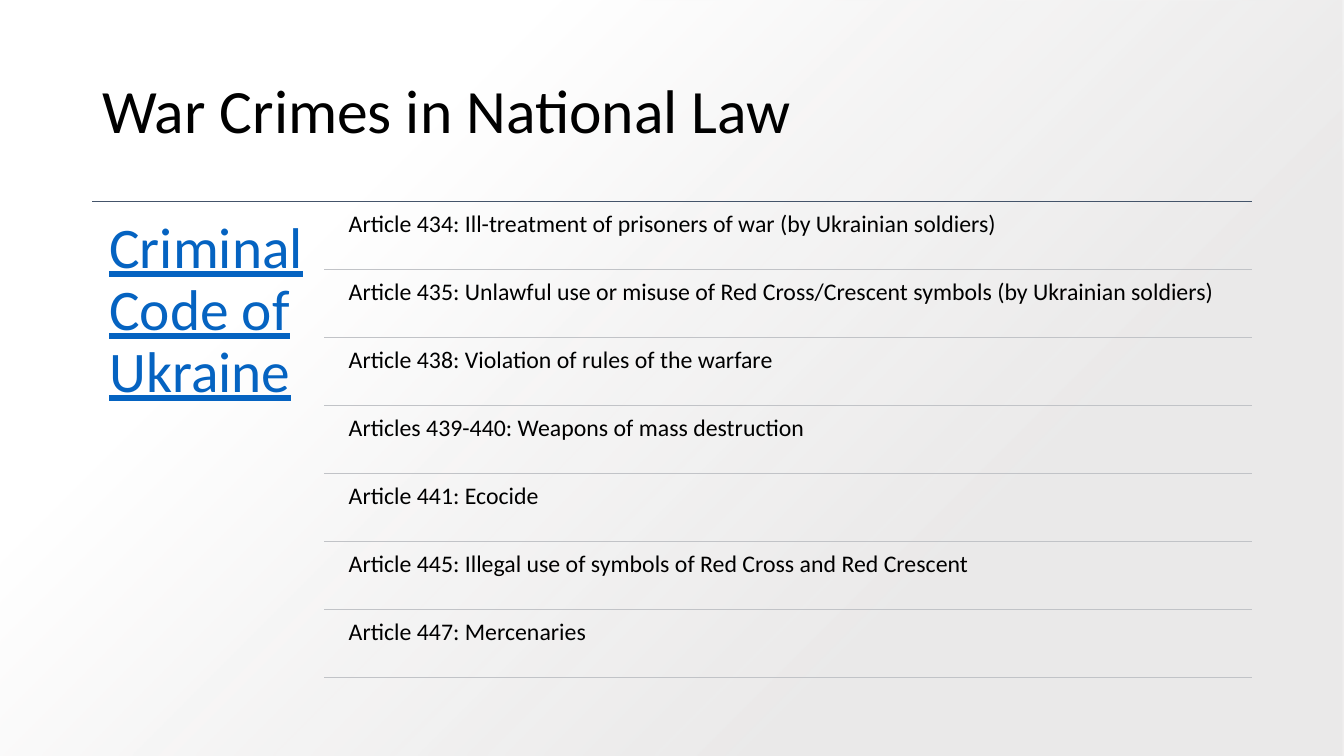
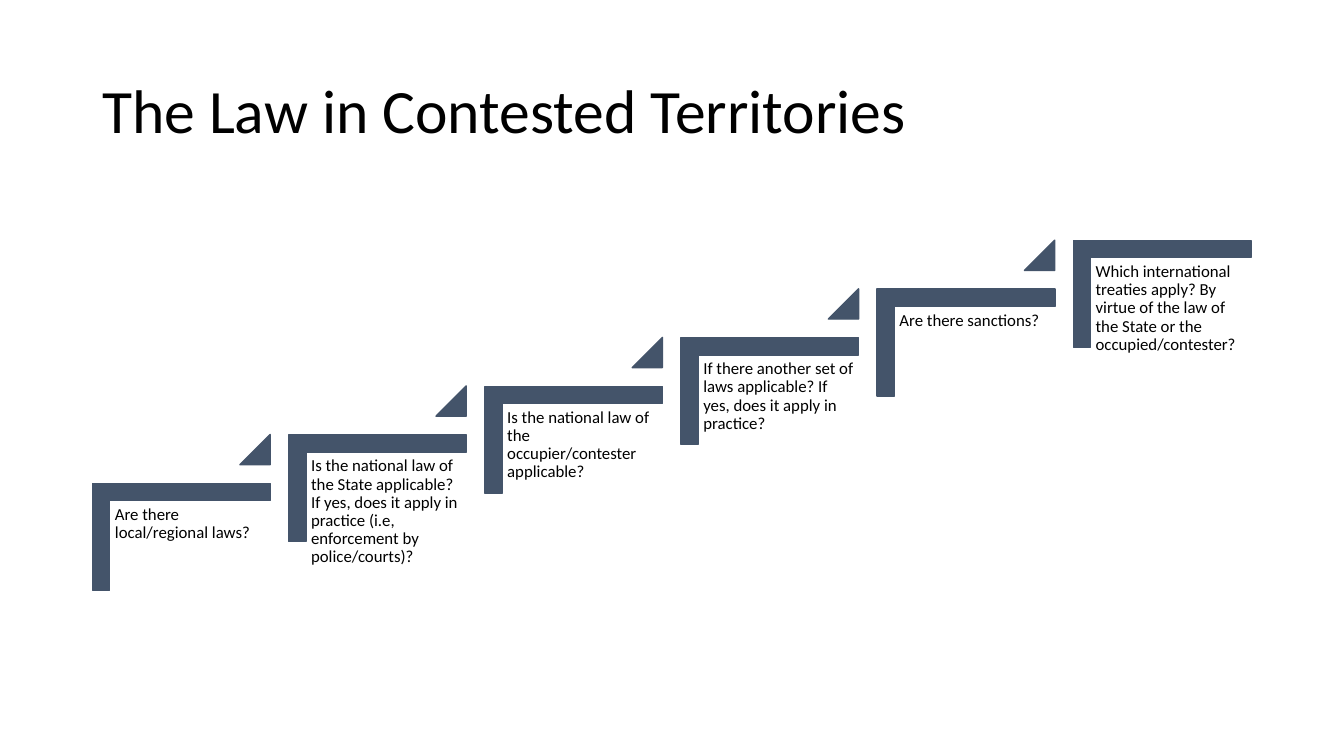
from dataclasses import dataclass

from pptx import Presentation
from pptx.dml.color import RGBColor
from pptx.enum.shapes import MSO_CONNECTOR, MSO_SHAPE
from pptx.enum.text import MSO_ANCHOR
from pptx.oxml import parse_xml
from pptx.oxml.ns import nsdecls
from pptx.oxml.xmlchemy import OxmlElement
from pptx.shapes.autoshape import Shape
from pptx.slide import Slide
from pptx.util import Pt

STRAIGHT = MSO_CONNECTOR.STRAIGHT
RECTANGLE = MSO_SHAPE.RECTANGLE
CORNER = MSO_SHAPE.CORNER
TRIANGLE = MSO_SHAPE.ISOSCELES_TRIANGLE
TOP, MIDDLE = MSO_ANCHOR.TOP, MSO_ANCHOR.MIDDLE

BLACK = RGBColor(0x00, 0x00, 0x00)
SLATE = RGBColor(0x44, 0x54, 0x6A)
LINK_BLUE = RGBColor(0x05, 0x63, 0xC1)
RULE_GREY = RGBColor(0xC1, 0xC3, 0xC7)
GLOW_GREY = RGBColor(0xE7, 0xE6, 0xE6)
WHITE = RGBColor(0xFF, 0xFF, 0xFF)

FONT = "Calibri"
SLIDE_WIDTH, SLIDE_HEIGHT = 960, 540
MARGIN_LEFT, CONTENT_WIDTH = 66, 828
CONTENT_RIGHT = MARGIN_LEFT + CONTENT_WIDTH


@dataclass(frozen=True)
class Box:
    left: float
    top: float
    width: float
    height: float

    def lengths(self) -> tuple[Pt, Pt, Pt, Pt]:
        return Pt(self.left), Pt(self.top), Pt(self.width), Pt(self.height)

    def shifted(self, dx: float, dy: float) -> "Box":
        return Box(self.left + dx, self.top + dy, self.width, self.height)


TITLE_BOX = Box(MARGIN_LEFT, 28.75, CONTENT_WIDTH, 104.4)

ARTICLES = (
    "Article 434: Ill-treatment of prisoners of war (by Ukrainian soldiers)",
    "Article 435: Unlawful use or misuse of Red Cross/Crescent symbols (by Ukrainian soldiers)",
    "Article 438: Violation of rules of the warfare",
    "Articles 439-440: Weapons of mass destruction",
    "Article 441: Ecocide",
    "Article 445: Illegal use of symbols of Red Cross and Red Crescent",
    "Article 447: Mercenaries",
)
LIST_TOP, LIST_HEIGHT = 144, 340
CODE_BOX = Box(MARGIN_LEFT, LIST_TOP, 165.6, LIST_HEIGHT)
ROW_GAP = 2.4
ARTICLE_INDENT = 12.4

QUESTIONS = (
    "Are there local/regional laws?",
    "Is the national law of the State applicable? If yes, does it apply in practice "
    "(i.e, enforcement by police/courts)?",
    "Is the national law of the occupier/contester applicable?",
    "If there another set of laws applicable? If yes, does it apply in practice?",
    "Are there sanctions?",
    "Which international treaties apply? By virtue of the law of the State or the "
    "occupied/contester?",
)
STEP_RIGHT, STEP_UP = 140.1, 34.7
BRACKET_BOX = Box(91.4, 320, 76.4, 127)
BRACKET_THICKNESS = 0.161
QUESTION_BOX = Box(78.5, 357.9, 114.5, 100.3)
POINTER_BOX = Box(171.4, 310.4, 21.6, 21.6)


def add_text(slide: Slide, box: Box, text: str, *, size: float,
             color: RGBColor = BLACK, underline: bool = False,
             inset_x: float = 7.2, inset_y: float = 3.6,
             anchor: MSO_ANCHOR = TOP) -> None:
    frame = slide.shapes.add_textbox(*box.lengths()).text_frame
    frame.word_wrap = True
    frame.vertical_anchor = anchor
    frame.margin_left = frame.margin_right = Pt(inset_x)
    frame.margin_top = frame.margin_bottom = Pt(inset_y)
    paragraph = frame.paragraphs[0]
    paragraph.line_spacing = 0.9
    run = paragraph.add_run()
    run.text = text
    run.font.name = FONT
    run.font.size = Pt(size)
    run.font.color.rgb = color
    run.font.underline = underline


def add_title(slide: Slide, title: str) -> None:
    add_text(slide, TITLE_BOX, title, size=44, anchor=MIDDLE)


def add_rule(slide: Slide, left: float, y: float, color: RGBColor, weight: float) -> None:
    rule = slide.shapes.add_connector(STRAIGHT, Pt(left), Pt(y), Pt(CONTENT_RIGHT), Pt(y))
    rule.line.color.rgb = color
    rule.line.width = Pt(weight)
    rule._element.spPr.append(OxmlElement("a:effectLst"))


def add_slate_shape(slide: Slide, kind: MSO_SHAPE, box: Box, *adjustments: float) -> Shape:
    shape = slide.shapes.add_shape(kind, *box.lengths())
    shape.shadow.inherit = False
    shape.fill.solid()
    shape.fill.fore_color.rgb = SLATE
    shape.line.color.rgb = SLATE
    shape.line.width = Pt(1)
    for index, value in enumerate(adjustments):
        shape.adjustments[index] = value
    return shape


def add_glow(slide: Slide) -> None:
    glow = slide.shapes.add_shape(RECTANGLE, *Box(0, 0, SLIDE_WIDTH, SLIDE_HEIGHT).lengths())
    glow.shadow.inherit = False
    glow.line.fill.background()
    gradient = parse_xml(
        f'<a:gradFill {nsdecls("a")}><a:gsLst>'
        f'<a:gs pos="28000"><a:srgbClr val="{GLOW_GREY}"><a:alpha val="84000"/></a:srgbClr></a:gs>'
        f'<a:gs pos="74000"><a:srgbClr val="{WHITE}"/></a:gs></a:gsLst>'
        '<a:path path="circle"><a:fillToRect l="100000" t="100000"/></a:path></a:gradFill>'
    )
    glow._element.spPr.prstGeom.addnext(gradient)


def build_war_crimes(slide: Slide) -> None:
    add_glow(slide)
    add_title(slide, "War Crimes in National Law")
    add_rule(slide, MARGIN_LEFT, LIST_TOP, SLATE, 0.5)
    add_text(slide, CODE_BOX, "Criminal Code of Ukraine", size=41, color=LINK_BLUE,
             underline=True, inset_x=12.2, inset_y=12.2)
    rule_left = CODE_BOX.left + CODE_BOX.width
    article_left = rule_left + ARTICLE_INDENT
    pitch = LIST_HEIGHT / len(ARTICLES)
    for row, article in enumerate(ARTICLES):
        row_top = LIST_TOP + row * pitch
        article_box = Box(article_left, row_top + ROW_GAP,
                          CONTENT_RIGHT - article_left, pitch - ROW_GAP)
        add_text(slide, article_box, article, size=17, inset_x=5.1, inset_y=5.1)
        add_rule(slide, rule_left, row_top + pitch, RULE_GREY, 1)


def build_contested_territories(slide: Slide) -> None:
    add_title(slide, "The Law in Contested Territories")
    for step, question in enumerate(QUESTIONS):
        dx, dy = step * STEP_RIGHT, -step * STEP_UP
        bracket = add_slate_shape(slide, CORNER, BRACKET_BOX.shifted(dx, dy),
                                  BRACKET_THICKNESS, BRACKET_THICKNESS)
        bracket.rotation = 90
        add_text(slide, QUESTION_BOX.shifted(dx, dy), question, size=12,
                 inset_x=3.6, inset_y=3.6)
        if step < len(QUESTIONS) - 1:
            add_slate_shape(slide, TRIANGLE, POINTER_BOX.shifted(dx, dy), 1)


def main() -> None:
    deck = Presentation()
    deck.slide_width, deck.slide_height = Pt(SLIDE_WIDTH), Pt(SLIDE_HEIGHT)
    blank = deck.slide_layouts[6]
    for build in (build_war_crimes, build_contested_territories):
        build(deck.slides.add_slide(blank))
    deck.save("out.pptx")


if __name__ == "__main__":
    main()
